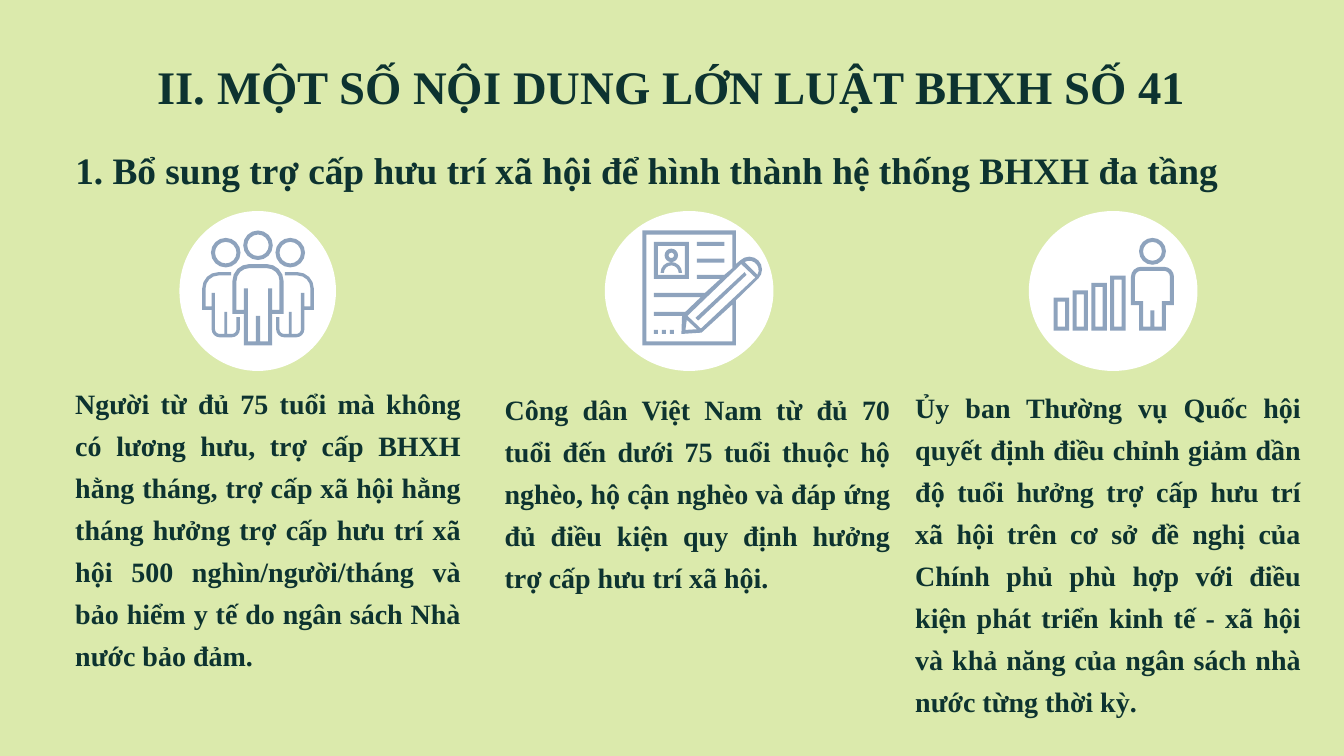
from math import ceil, cos, radians, sin
from lxml.etree import SubElement
from pptx import Presentation
from pptx.dml.color import RGBColor
from pptx.enum.shapes import MSO_SHAPE
from pptx.enum.text import MSO_ANCHOR, MSO_AUTO_SIZE, PP_ALIGN
from pptx.oxml.ns import qn
from pptx.util import Pt

PX = 9144
BAND = 6
HEX = {"back": "DBEAAC", "ink": "0D3330", "disc": "FFFFFF", "icon": "1F497D"}
FRAME = {"margin_left": 0, "margin_right": 0, "margin_top": 0, "margin_bottom": 0,
         "word_wrap": True, "vertical_anchor": MSO_ANCHOR.TOP,
         "auto_size": MSO_AUTO_SIZE.SHAPE_TO_FIT_TEXT}
TITLE = "II. MỘT SỐ NỘI DUNG LỚN LUẬT BHXH SỐ 41"
HEAD = "1. Bổ sung trợ cấp hưu trí xã hội để hình thành hệ thống BHXH đa tầng"
NOTES = [
    ((112, 562, 574, 499),
     "Người từ đủ 75 tuổi mà không có lương hưu, trợ cấp BHXH hằng tháng, "
     "trợ cấp xã hội hằng tháng hưởng trợ cấp hưu trí xã hội 500 nghìn/người/tháng "
     "và bảo hiểm y tế do ngân sách Nhà nước bảo đảm."),
    ((751, 571, 574, 373),
     "Công dân Việt Nam từ đủ 70 tuổi đến dưới 75 tuổi thuộc hộ nghèo, hộ cận nghèo "
     "và đáp ứng đủ điều kiện quy định hưởng trợ cấp hưu trí xã hội."),
    ((1362, 568, 574, 562),
     "Ủy ban Thường vụ Quốc hội quyết định điều chỉnh giảm dần độ tuổi hưởng trợ cấp "
     "hưu trí xã hội trên cơ sở đề nghị của Chính phủ phù hợp với điều kiện phát triển "
     "kinh tế - xã hội và khả năng của ngân sách nhà nước từng thời kỳ."),
]


def tint(name):
    return RGBColor.from_string(HEX[name])


def apply(item, values):
    for key, value in values.items():
        setattr(item, key, value)


def emu(*spans):
    return [round(span * PX) for span in spans]


def write(box, area, text, size, pitch, align):
    apply(box, dict(zip(("left", "top", "width", "height"), emu(*area))))
    apply(box.text_frame, FRAME)
    box.text_frame.text = text
    para = box.text_frame.paragraphs[0]
    apply(para, {"alignment": align, "line_spacing": Pt(pitch), "space_before": Pt(0)})
    apply(para.font, {"name": "Times New Roman", "size": Pt(size), "bold": True})
    para.font.color.rgb = tint("ink")


def label(shapes, area, *style):
    write(shapes.add_textbox(*emu(*area)), area, *style)


def paint(shape, fill):
    shape.shadow.inherit = False
    shape.fill.solid()
    shape.fill.fore_color.rgb = tint(fill)
    shape.line.fill.background()


def draw(shapes, loops):
    loops = [[emu(*point) for point in loop] for loop in loops]
    pen = shapes.build_freeform(*loops[0][0], scale=1.0)
    for i, loop in enumerate(loops):
        if i:
            pen.move_to(*loop[0])
        pen.add_line_segments(loop[1:], close=True)
    shape = pen.convert_to_shape()
    paint(shape, "icon")
    color = shape._element.spPr.find(qn("a:solidFill"))[0]
    SubElement(color, qn("a:alpha"), val="50000")


def arc(x, y, r, start, end):
    steps = ceil(abs(end - start) / 22.5)
    turns = [radians(start + (end - start) * i / steps) for i in range(steps + 1)]
    return [(x + r * cos(t), y + r * sin(t)) for t in turns]


def ring(x, y, r):
    return [arc(x, y, size, 0, 360)[:-1] for size in (r, r - BAND)]


def block(x, y, wide, high):
    return [(x, y), (x + wide, y), (x + wide, y + high), (x, y + high)]


def frame(x, y, wide, high):
    return [block(x, y, wide, high),
            block(x + BAND, y + BAND, wide - 2 * BAND, high - 2 * BAND)]


def flip(x, points):
    return [(2 * x - a, b) for a, b in reversed(points)]


def body(x, top, half, r, arm, leg, foot, slit, split):
    outer = [(x - leg, foot), (x - leg, arm), (x - half, arm)]
    inner = [(x - 3, split), (x - 3, foot - BAND), (x - leg + BAND, foot - BAND),
             (x - leg + BAND, slit), (x - leg, slit), (x - leg, arm - BAND),
             (x - half + BAND, arm - BAND)]
    loops = []
    for side, size in ((outer, r), (inner, r - BAND)):
        side += arc(x - half + r, top + r, size, 180, 270)
        loops.append(side + flip(x, side))
    return loops


def people():
    mid = 384
    side = [(352, 472), (357, 472)] + arc(345, 490, 12, 0, 90)
    side += arc(327, 490, 12, 90, 180) + [(315, 461), (301, 461)]
    side += arc(325, 429, 24, 180, 270) + [(344, 405), (344, 410)]
    side += arc(325, 429, 19, 270, 180) + [(306, 456), (315, 456), (315, 436), (320, 436)]
    side += arc(327, 490, 7, 180, 90) + [(334, 497), (334, 464), (338, 464), (338, 497)]
    side += arc(345, 490, 7, 90, 0)
    loops = body(mid, 393, 38, 25, 467, 21, 514, 429, 470) + [side, flip(mid, side)]
    return loops + ring(mid, 365, 22) + ring(mid - 48, 376, 22) + ring(mid + 48, 376, 22)


def paper():
    edge = arc(1115, 401, 19, -135, 45) + [
        (1095, 447), (1095, 514), (956, 514), (956, 343), (1095, 343), (1095, 393)]
    sheet = [(1090, 508), (962, 508), (962, 349), (1090, 349), (1090, 399),
             (1078, 409), (1037, 409), (1037, 415), (1072, 415), (1049, 436),
             (973, 436), (973, 442), (1043, 442), (1020, 464), (973, 464),
             (973, 470), (1015, 470), (1014, 497), (1044, 495), (1090, 453)]
    tip = [(1022, 476), (1037, 490), (1020, 491)]
    shaft = [(1043, 489), (1023, 470), (1103, 393), (1124, 413)]
    stripe = [(1035, 473), (1108, 405), (1111, 409), (1039, 477)]
    cap = arc(1115, 402, 14, -120, 30)
    bust = arc(999, 406, 16, 180, 360) + arc(999, 406, 11, 360, 180)
    loops = [edge, sheet, tip, shaft, stripe, cap, bust]
    loops += frame(973, 360, 52, 55) + ring(999, 380, 10)
    loops += [block(1037, y, 41, BAND) for y in (360, 385)]
    return loops + [block(973 + 12 * i, 491, BAND, BAND) for i in range(3)]


def growth():
    loops = ring(1715, 374, 20) + body(1715, 397, 32, 15, 454, 20, 492, 448, 462)
    for i in range(4):
        top = 443 - 11 * i
        loops += frame(1568 + 28 * i, top, 23, 492 - top)
    return loops


def badge(shapes, x, wide, icon):
    group = shapes.add_group_shape().shapes
    paint(group.add_shape(MSO_SHAPE.OVAL, *emu(x, 314, wide, 238)), "disc")
    draw(group, icon())


def main():
    deck = Presentation()
    apply(deck, {"slide_width": 2000 * PX, "slide_height": 1125 * PX})
    slide = deck.slides.add_slide(deck.slide_layouts[5])
    slide.background.fill.solid()
    slide.background.fill.fore_color.rgb = tint("back")
    shapes = slide.shapes
    write(shapes.title, (112, 83, 1775, 82), TITLE, 50, 62.4, PP_ALIGN.CENTER)
    label(shapes, (112, 208, 1775, 148), HEAD, 40, 55.5, PP_ALIGN.LEFT)
    for area, text in NOTES:
        label(shapes, area, text, 30, 45, PP_ALIGN.JUSTIFY)
    for x, wide, icon in ((267, 233, people), (1531, 251, growth), (900, 251, paper)):
        badge(shapes, x, wide, icon)
    deck.save("out.pptx")


if __name__ == "__main__":
    main()
